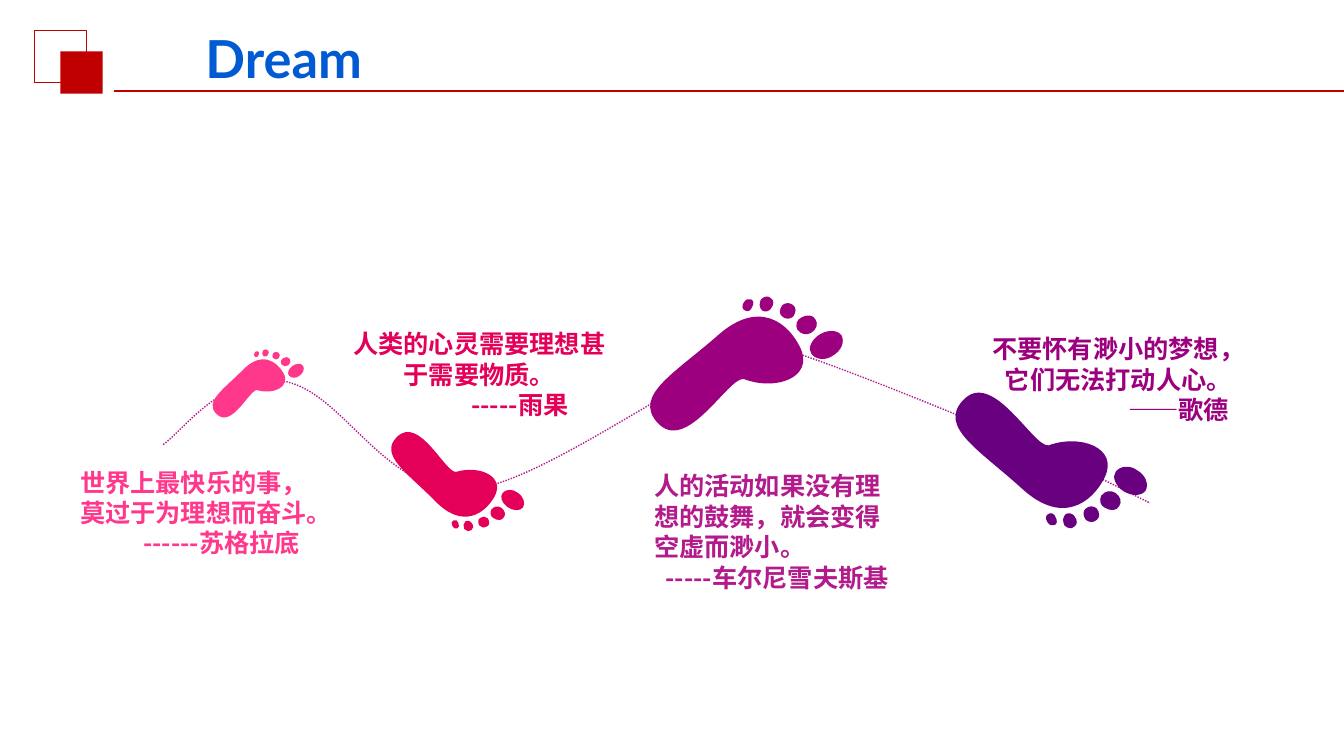
import math

import lxml.etree
import pptx
import pptx.dml.color
import pptx.enum.dml
import pptx.enum.shapes
import pptx.enum.text
import pptx.oxml.ns
import pptx.util

Pt = pptx.util.Pt
RGBColor = pptx.dml.color.RGBColor
qn = pptx.oxml.ns.qn
CENTER = pptx.enum.text.PP_ALIGN.CENTER
LEFT = pptx.enum.text.PP_ALIGN.LEFT
RECTANGLE = pptx.enum.shapes.MSO_SHAPE.RECTANGLE

RED = RGBColor(0xC0, 0x00, 0x00)
PINK = RGBColor(0xFF, 0x38, 0x8C)
CRIMSON = RGBColor(0xE4, 0x00, 0x59)
MAGENTA = RGBColor(0xB3, 0x1A, 0x8B)
PURPLE = RGBColor(0x9C, 0x00, 0x7F)
VIOLET = RGBColor(0x68, 0x00, 0x7F)
NAVY = RGBColor(0x00, 0x34, 0x9E)
BLUE = RGBColor(0x00, 0x5B, 0xD3)
TITLE_STOPS = [(0, NAVY), (21, BLUE), (49, VIOLET), (67, PURPLE), (83, CRIMSON), (97, PINK)]

TITLE_FONT = "Lato"
QUOTE_FONT = "Noto Sans CJK SC"

# Chains of cubic curves: a start, then two controls and an end per curve.
TRAIL = [(116.6, 317.5), (131.8, 306.7), (159.8, 265.7), (202.3, 272.2),
         (244.8, 279.4), (272.9, 349.9), (330.5, 349.9),
         (388.1, 350.6), (522.7, 238.3), (559.4, 249.1),
         (596.2, 260.6), (666, 288.7), (718.6, 311),
         (770.4, 332.6), (803.5, 350.6), (821.5, 359.3)]

# Sole and five toes around the foot's origin, drawn at FOOT_TILT degrees.
FOOT_TILT = 66.2
FOOT_PARTS = [
    [(-12, 26), (-27, 23), (-69, 102), (-98, 69), (-122, 42), (-80, 20), (-37, -18),
     (3, -53), (32, -30), (44, -5), (58, 25), (19, 38), (-12, 26)],
    [(76, 3), (69, 8), (59, 7), (55, 1), (51, -4), (55, -13), (63, -18),
     (71, -23), (81, -23), (85, -17), (88, -11), (85, -2), (76, 3)],
    [(55, -20), (50, -17), (45, -18), (41, -23), (39, -27), (40, -33), (45, -35),
     (50, -38), (57, -38), (59, -33), (62, -29), (60, -23), (55, -20)],
    [(37, -36), (34, -33), (29, -33), (26, -36), (23, -38), (23, -43), (26, -47),
     (29, -50), (34, -50), (37, -47), (40, -45), (40, -40), (37, -36)],
    [(15, -44), (13, -41), (9, -40), (6, -42), (3, -45), (3, -49), (5, -53),
     (8, -56), (12, -57), (15, -54), (18, -52), (18, -48), (15, -44)],
    [(-4, -45), (-5, -42), (-8, -40), (-11, -42), (-14, -43), (-14, -47), (-12, -50),
     (-10, -53), (-8, -54), (-5, -53), (-2, -52), (-2, -48), (-4, -45)],
]

# Origin x, origin y, points per foot unit, rotation, mirrored, colour
FOOTPRINTS = [
    (187.2, 269.3, 0.35, 62.2, False, PINK),
    (331, 350.7, 0.51, -62.2, True, CRIMSON),
    (540, 252, 0.72, 66.2, False, PURPLE),
    (757.4, 337, 0.72, -65.2, True, VIOLET),
]

# Box, quotation, its alignment, author, indent of the author, colour
QUOTES = [
    ((43.2, 329.8, 190, 72.7), "世界上最快乐的事，莫过于为理想而奋斗。", CENTER,
     "------苏格拉底", 40, PINK),
    ((241.2, 231.1, 202.3, 72.7), "人类的心灵需要理想甚于需要物质。", CENTER,
     "-----雨果", 58, CRIMSON),
    ((460.1, 332.6, 190, 94.3), "人的活动如果没有理想的鼓舞，就会变得空虚而渺小。", LEFT,
     "-----车尔尼雪夫斯基", 0, MAGENTA),
    ((697.7, 234.7, 202.3, 72.7), "不要怀有渺小的梦想，它们无法打动人心。", CENTER,
     "——歌德", 86, PURPLE),
]


def turn(point, degrees):
    x, y = point
    cosine, sine = math.cos(math.radians(degrees)), math.sin(math.radians(degrees))
    return x * cosine - y * sine, x * sine + y * cosine


def trace_curves(chain, steps=12):
    """Return points along a chain of cubic curves."""
    points = [chain[0]]
    for first in range(0, len(chain) - 1, 3):
        controls = chain[first:first + 4]
        for step in range(1, steps + 1):
            t = step / steps
            weights = ((1 - t) ** 3, 3 * t * (1 - t) ** 2, 3 * t * t * (1 - t), t ** 3)
            points.append(tuple(sum(weight * control[axis]
                                    for weight, control in zip(weights, controls))
                                for axis in (0, 1)))
    return points


def add_curved_outline(shapes, chain):
    """Size a freeform by the traced curves, then give it the curves themselves."""
    corners = [(Pt(x), Pt(y)) for x, y in trace_curves(chain)]
    builder = shapes.build_freeform(*corners[0])
    builder.add_line_segments(corners[1:], close=False)
    shape = builder.convert_to_shape()
    shape.shadow.inherit = False
    outline = next(shape.element.iter(qn("a:path")))
    for segment in outline.findall(qn("a:lnTo")):
        outline.remove(segment)
    for first in range(1, len(chain), 3):
        curve = lxml.etree.SubElement(outline, qn("a:cubicBezTo"))
        for x, y in chain[first:first + 3]:
            lxml.etree.SubElement(curve, qn("a:pt"), x=str(Pt(x) - shape.left),
                                  y=str(Pt(y) - shape.top))
    if chain[0] == chain[-1]:
        lxml.etree.SubElement(outline, qn("a:close"))
    return shape


def fill_plain(shape, color):
    shape.fill.solid()
    shape.fill.fore_color.rgb = color
    shape.line.fill.background()


def add_trail(shapes):
    trail = add_curved_outline(shapes, TRAIL)
    trail.fill.background()
    trail.line.color.rgb = MAGENTA
    trail.line.width = Pt(1)
    trail.line.dash_style = pptx.enum.dml.MSO_LINE.ROUND_DOT


def add_footprint(shapes, origin_x, origin_y, scale, rotation, mirrored, color):
    group = shapes.add_group_shape()
    side = -scale if mirrored else scale
    for part in FOOT_PARTS:
        upright = [turn(point, -FOOT_TILT) for point in part]
        chain = [(x * scale, y * side) for x, y in upright]
        center_x, center_y = ((min(values) + max(values)) / 2
                              for values in zip(*trace_curves(chain)))
        turned_x, turned_y = turn((center_x, center_y), rotation)
        shift_x = origin_x + turned_x - center_x
        shift_y = origin_y + turned_y - center_y
        shape = add_curved_outline(group.shapes, [(x + shift_x, y + shift_y) for x, y in chain])
        shape.rotation = rotation
        fill_plain(shape, color)


def add_square(shapes, left, top, size):
    square = shapes.add_shape(RECTANGLE, Pt(left), Pt(top), Pt(size), Pt(size))
    square.shadow.inherit = False
    return square


def add_header(shapes):
    frame = add_square(shapes, 24.5, 21.6, 37.4)
    frame.fill.background()
    frame.line.color.rgb = RED
    frame.line.width = Pt(0.75)
    fill_plain(add_square(shapes, 43.2, 36.7, 30.2), RED)
    rule = shapes.add_connector(pptx.enum.shapes.MSO_CONNECTOR.STRAIGHT,
                                Pt(81.4), Pt(64.8), Pt(960), Pt(64.8))
    rule.line.color.rgb = RED
    rule.line.width = Pt(1.25)
    lxml.etree.SubElement(rule.element.spPr, qn("a:effectLst"))


def add_text(shapes, box, paragraphs, font_name, size):
    """Add a bold text box of (text, alignment) pairs and return its paragraphs."""
    text_frame = shapes.add_textbox(*map(Pt, box)).text_frame
    text_frame.word_wrap = True
    text_frame.auto_size = pptx.enum.text.MSO_AUTO_SIZE.SHAPE_TO_FIT_TEXT
    text_frame.text = "\n".join(text for text, alignment in paragraphs)
    for paragraph, (text, alignment) in zip(text_frame.paragraphs, paragraphs):
        paragraph.alignment = alignment
        font = paragraph.runs[0].font
        font.name, font.size, font.bold = font_name, Pt(size), True
        properties = paragraph.runs[0]._r.get_or_add_rPr()
        lxml.etree.SubElement(properties, qn("a:ea"), typeface=font_name)
    return text_frame.paragraphs


def add_title(shapes):
    title = add_text(shapes, (65.5, 15.1, 274.3, 52.6), [("Dream", CENTER)], TITLE_FONT, 37.4)[0]
    gradient = lxml.etree.Element(qn("a:gradFill"))
    stops = lxml.etree.SubElement(gradient, qn("a:gsLst"))
    for percent, color in TITLE_STOPS:
        stop = lxml.etree.SubElement(stops, qn("a:gs"), pos=str(percent * 1000))
        lxml.etree.SubElement(stop, qn("a:srgbClr"), val=str(color))
    lxml.etree.SubElement(gradient, qn("a:lin"), ang="0", scaled="0")
    title.runs[0]._r.get_or_add_rPr().insert(0, gradient)


def add_quote(shapes, box, quotation, alignment, author, indent, color):
    paragraphs = add_text(shapes, box, [(quotation, alignment), (author, CENTER)], QUOTE_FONT, 18)
    for paragraph in paragraphs:
        paragraph.line_spacing = Pt(21.7)
        paragraph.runs[0].font.color.rgb = color
    if indent:
        paragraphs[1]._p.get_or_add_pPr().set("marL", str(Pt(indent)))


def main():
    presentation = pptx.Presentation()
    presentation.slide_width, presentation.slide_height = Pt(960), Pt(540)
    shapes = presentation.slides.add_slide(presentation.slide_layouts[6]).shapes
    add_header(shapes)
    add_title(shapes)
    add_trail(shapes)
    for footprint in FOOTPRINTS:
        add_footprint(shapes, *footprint)
    for quote in QUOTES:
        add_quote(shapes, *quote)
    presentation.save("out.pptx")


if __name__ == "__main__":
    main()
